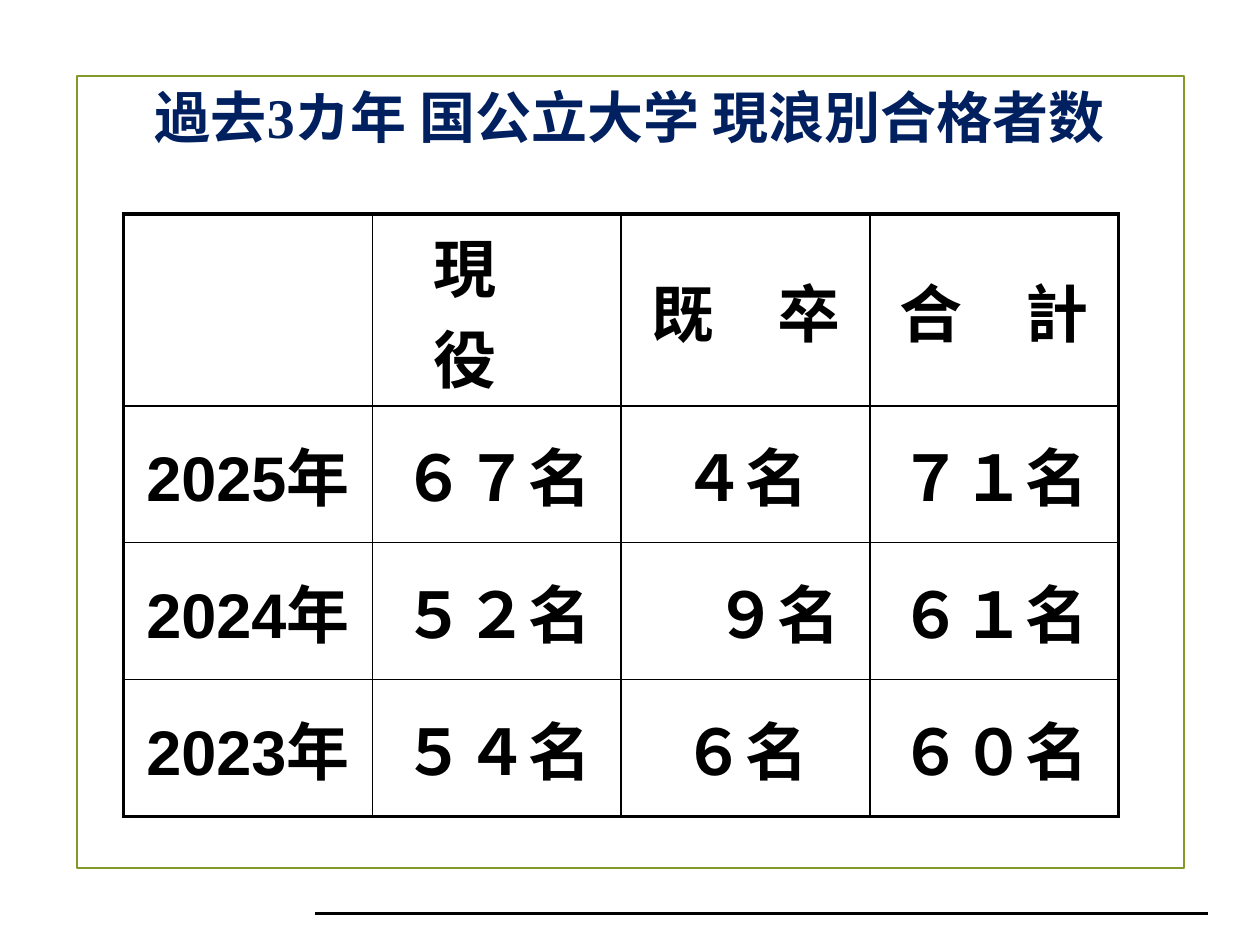
from lxml.etree import SubElement
from pptx import Presentation
from pptx.dml.color import RGBColor
from pptx.enum.shapes import MSO_CONNECTOR, MSO_SHAPE
from pptx.enum.text import MSO_ANCHOR, PP_ALIGN
from pptx.oxml.ns import qn
from pptx.util import Inches, Pt

BLACK, WHITE, NAVY, OLIVE = "000000", "FFFFFF", "002060", "83992A"
THIN, THICK = 1, 2.25
HEADER_SHARE = 1.4  # header height, in body rows
ROWS = [
    ["", "現　役　", "既　卒", "合　計"],
    ["2025年", "６７名", "４名", "７１名"],
    ["2024年", "５２名", "　９名", "６１名"],
    ["2023年", "５４名", "６名", "６０名"],
]


def color(hex_string):
    return RGBColor.from_string(hex_string)


def style_paragraph(paragraph, text, font_name, size, hex_color):
    paragraph.text = text
    paragraph.alignment = PP_ALIGN.CENTER
    font = paragraph.font
    font.name, font.size, font.bold = font_name, Pt(size), True
    font.color.rgb = color(hex_color)


def add_frame(slide, box):
    frame = slide.shapes.add_shape(MSO_SHAPE.RECTANGLE, *map(Inches, box))
    frame.shadow.inherit = False
    frame.fill.background()
    frame.line.color.rgb = color(OLIVE)
    frame.line.width = Pt(1.25)


def add_footer_rule(slide, left, right, y):
    rule = slide.shapes.add_connector(
        MSO_CONNECTOR.STRAIGHT, *map(Inches, (left, y, right, y)))
    rule.line.color.rgb = color(BLACK)
    rule.line.width = Pt(1.5)
    SubElement(rule.line._ln.getparent(), qn("a:effectLst"))


def add_title(slide, box, text):
    text_frame = slide.shapes.add_textbox(*map(Inches, box)).text_frame
    text_frame.word_wrap = True
    text_frame.vertical_anchor = MSO_ANCHOR.MIDDLE
    style_paragraph(text_frame.paragraphs[0], text, "Times New Roman", 32, NAVY)


def set_border(cell, side, width):
    line = SubElement(cell._tc.get_or_add_tcPr(), qn(f"a:ln{side}"), w=str(Pt(width)))
    fill = SubElement(line, qn("a:solidFill"))
    SubElement(fill, qn("a:srgbClr"), val=BLACK)


def add_results_table(slide, box, rows):
    """Draw a table with a tall header, a thick outline and thin inner lines."""
    row_count, column_count = len(rows), len(rows[0])
    table = slide.shapes.add_table(
        row_count, column_count, *map(Inches, box)).table
    table.first_row = table.horz_banding = False
    body_height = box[3] / (HEADER_SHARE + row_count - 1)
    for i, row in enumerate(rows):
        table.rows[i].height = Inches(body_height * (HEADER_SHARE if i == 0 else 1))
        for j, text in enumerate(row):
            cell = table.cell(i, j)
            outer_sides = {"L": j == 0, "R": j == column_count - 1,
                           "T": i == 0, "B": i == row_count - 1}
            for side, is_outer in outer_sides.items():
                set_border(cell, side, THICK if is_outer else THIN)
            cell.fill.solid()
            cell.fill.fore_color.rgb = color(WHITE)
            cell.margin_left = cell.margin_right = Inches(0.07)
            cell.margin_top = cell.margin_bottom = Inches(0.04)
            cell.vertical_anchor = MSO_ANCHOR.MIDDLE
            style_paragraph(cell.text_frame.paragraphs[0], text, "Arial", 36, BLACK)


def main():
    presentation = Presentation()
    presentation.slide_width, presentation.slide_height = Inches(10), Inches(7.5)
    slide = presentation.slides.add_slide(presentation.slide_layouts[6])
    add_frame(slide, (0.61, 0.6, 8.79, 6.29))
    add_footer_rule(slide, 2.5, 9.59, 7.25)
    add_title(slide, (0.5, 0.3, 9, 1.25), "過去3カ年 国公立大学 現浪別合格者数")
    add_results_table(slide, (0.98, 1.7, 7.9, 4.78), ROWS)
    presentation.save("out.pptx")


if __name__ == "__main__":
    main()
